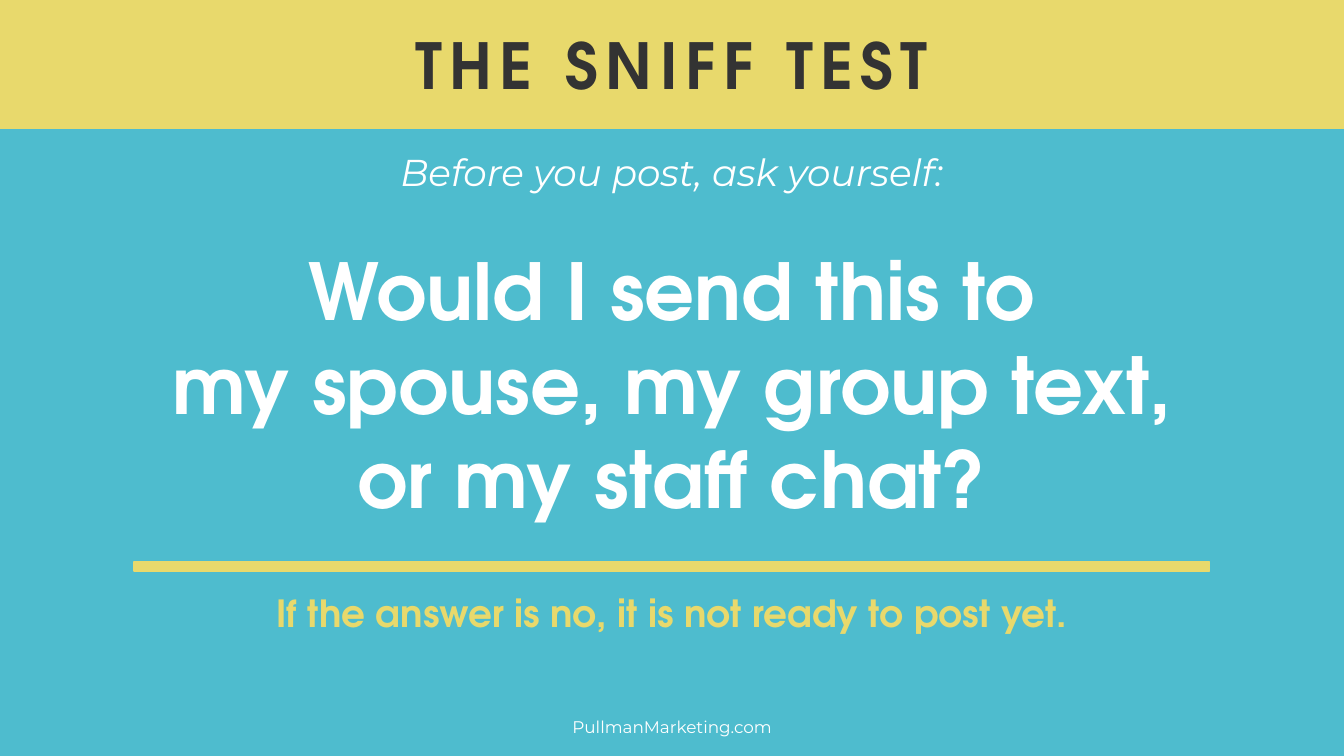
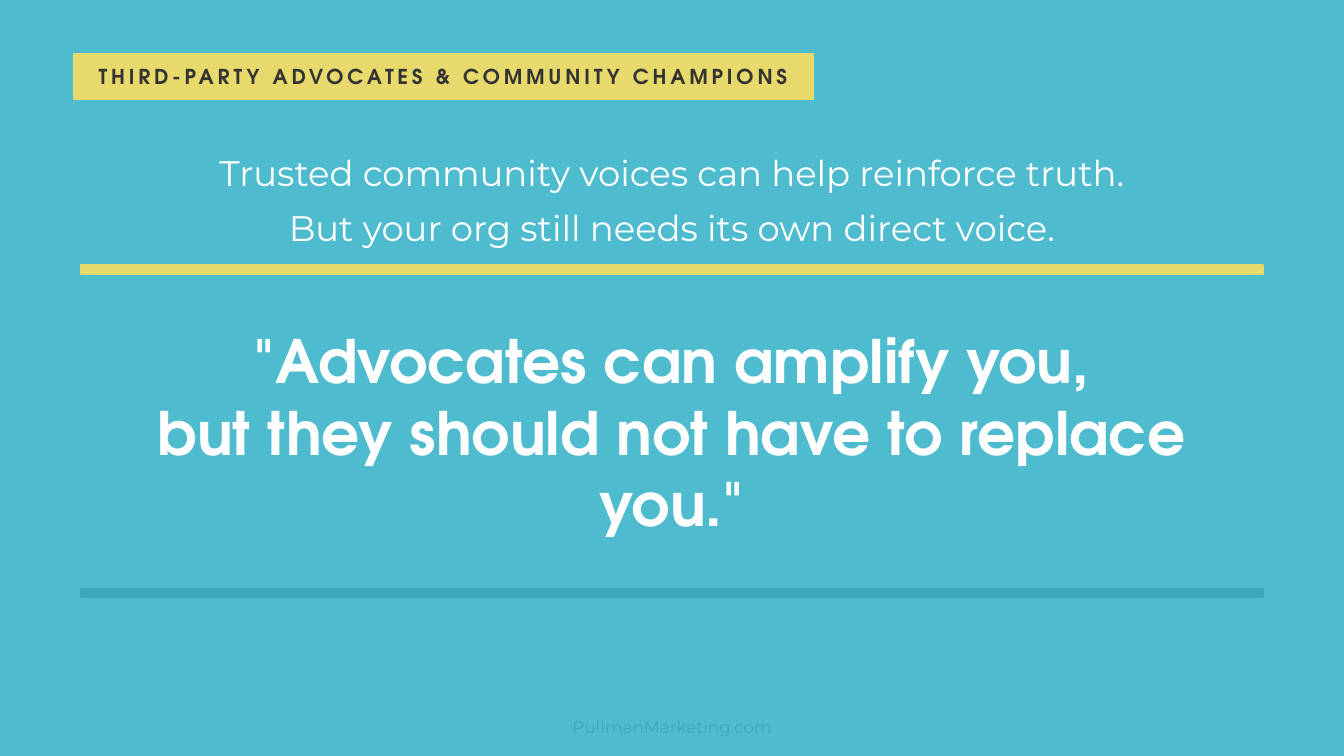
from pptx import Presentation
from pptx.dml.color import RGBColor
from pptx.enum.shapes import MSO_SHAPE
from pptx.enum.text import MSO_ANCHOR, PP_ALIGN
from pptx.util import Inches, Pt

RECTANGLE = MSO_SHAPE.RECTANGLE
MIDDLE = MSO_ANCHOR.MIDDLE
CENTER = PP_ALIGN.CENTER

AQUA, TEAL, YELLOW = "4EBCCE", "3AA8BA", "E8D96C"
CHARCOAL, WHITE = "333333", "FFFFFF"
HEADING, BODY = "TeX Gyre Adventor", "Montserrat"

WIDTH = 10
HEIGHT = WIDTH * 9 / 16
MARGIN = 0.6
CONTENT_WIDTH = WIDTH - 2 * MARGIN
TAG = (0.55, 0.4, 5.5, 0.34)
FOOTER = "PullmanMarketing.com"

SLIDES = [
    {
        "bars": [
            ((0, 0, WIDTH, 0.95), YELLOW),
            ((1, 4.18, 8, 0.07), YELLOW),
        ],
        "texts": [
            ((0.5, 0.1, 9, 0.75), ["THE SNIFF TEST"],
             dict(size=34, color=CHARCOAL, bold=True, tracking=4)),
            ((MARGIN, 1.05, CONTENT_WIDTH, 0.45), ["Before you post, ask yourself:"],
             dict(size=20, font=BODY, italic=True)),
            ((0.5, 1.6, 9, 2.5),
             ["Would I send this to", "my spouse, my group text,", "or my staff chat?"],
             dict(size=42, bold=True)),
            ((MARGIN, 4.3, CONTENT_WIDTH, 0.52),
             ["If the answer is no, it is not ready to post yet."],
             dict(size=20, color=YELLOW, bold=True)),
        ],
        "footer_color": WHITE,
    },
    {
        "bars": [
            (TAG, YELLOW),
            ((MARGIN, 1.97, CONTENT_WIDTH, 0.07), YELLOW),
            ((MARGIN, 4.38, CONTENT_WIDTH, 0.06), TEAL),
        ],
        "texts": [
            (TAG, ["THIRD-PARTY ADVOCATES & COMMUNITY CHAMPIONS"],
             dict(size=11, color=CHARCOAL, bold=True, tracking=2)),
            ((MARGIN, 1, CONTENT_WIDTH, 0.88),
             ["Trusted community voices can help reinforce truth.",
              "But your org still needs its own direct voice."],
             dict(size=19, font=BODY, line_spacing=1.3)),
            ((MARGIN, 2.12, CONTENT_WIDTH, 2.18),
             ['"Advocates can amplify you,', 'but they should not have to replace you."'],
             dict(size=32, bold=True)),
        ],
        "footer_color": TEAL,
    },
]


def rgb(value):
    return RGBColor.from_string(value)


def add_bar(slide, place, color):
    bar = slide.shapes.add_shape(RECTANGLE, *map(Inches, place))
    bar.shadow.inherit = False
    bar.fill.solid()
    bar.fill.fore_color.rgb = rgb(color)
    bar.line.color.rgb = rgb(color)
    bar.line.width = Pt(1)


def add_text(slide, place, lines, size, font=HEADING, color=WHITE, bold=False,
             italic=False, tracking=None, line_spacing=None):
    frame = slide.shapes.add_textbox(*map(Inches, place)).text_frame
    frame.word_wrap = True
    frame.vertical_anchor = MIDDLE
    frame.margin_left = frame.margin_right = frame.margin_top = frame.margin_bottom = 0
    for index, line in enumerate(lines):
        paragraph = frame.add_paragraph() if index else frame.paragraphs[0]
        paragraph.alignment = CENTER
        if line_spacing:
            paragraph.line_spacing = line_spacing
        run = paragraph.add_run()
        run.text = line
        run.font.name = font
        run.font.size = Pt(size)
        run.font.bold = bold
        run.font.italic = italic
        run.font.color.rgb = rgb(color)
        if tracking:
            run.font._element.set("spc", str(tracking * 100))


def build_slide(deck, content):
    slide = deck.slides.add_slide(deck.slide_layouts[6])
    slide.background.fill.solid()
    slide.background.fill.fore_color.rgb = rgb(AQUA)
    for place, color in content["bars"]:
        add_bar(slide, place, color)
    for place, lines, style in content["texts"]:
        add_text(slide, place, lines, **style)
    add_text(slide, (0, 5.28, WIDTH, 0.26), [FOOTER], size=9, font=BODY,
             color=content["footer_color"])


def main():
    deck = Presentation()
    deck.slide_width = Inches(WIDTH)
    deck.slide_height = Inches(HEIGHT)
    for content in SLIDES:
        build_slide(deck, content)
    deck.save("out.pptx")


if __name__ == "__main__":
    main()
